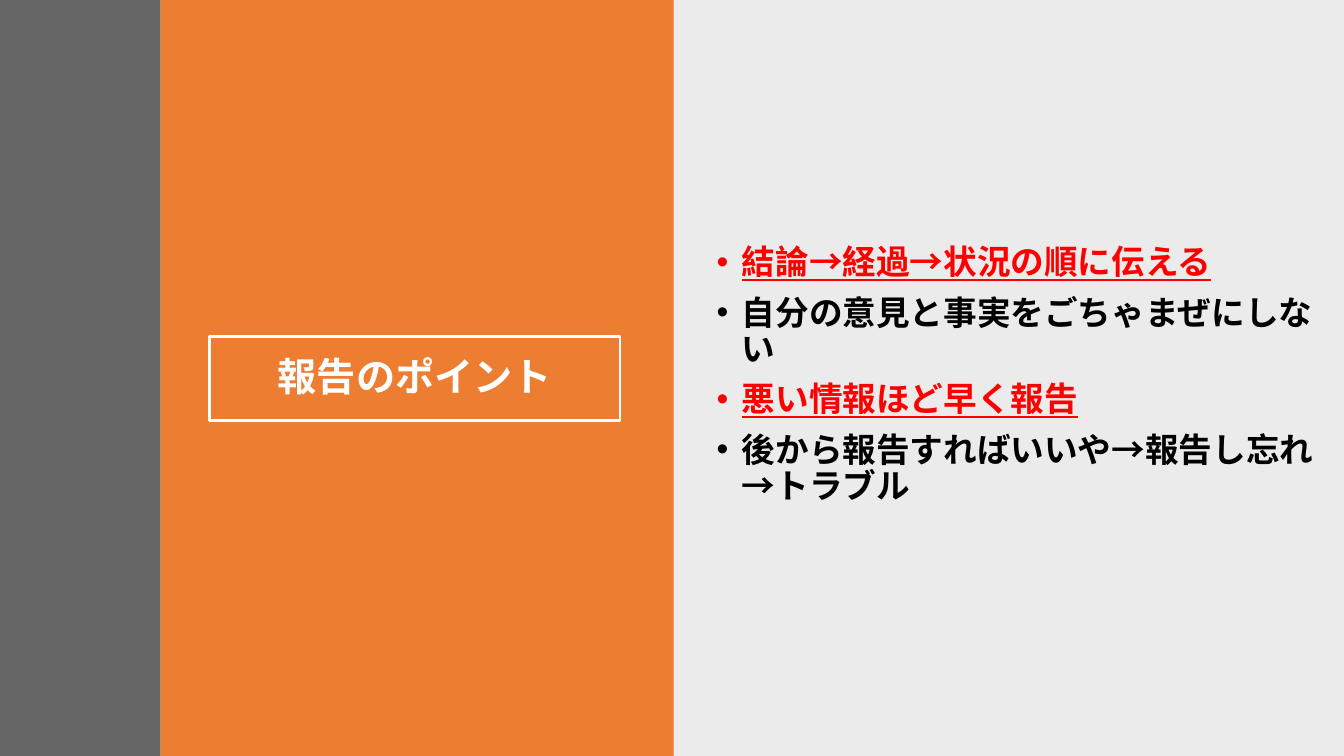
from dataclasses import dataclass

from lxml.etree import SubElement
from pptx import Presentation
from pptx.dml.color import RGBColor
from pptx.enum.shapes import MSO_SHAPE as Shape
from pptx.enum.text import MSO_ANCHOR as Anchor, MSO_AUTO_SIZE as AutoSize, PP_ALIGN as Align
from pptx.oxml.ns import qn
from pptx.slide import Slide
from pptx.util import Inches, Pt

BLACK = RGBColor(0x00, 0x00, 0x00)
WHITE = RGBColor(0xFF, 0xFF, 0xFF)
RED = RGBColor(0xFF, 0x00, 0x00)
ORANGE = RGBColor(0xED, 0x7D, 0x31)
CHARCOAL = RGBColor(0x40, 0x40, 0x40)
FONT = "Calibri"
SLIDE_HEIGHT = Inches(7.5)


@dataclass(frozen=True)
class Band:
    left: float
    width: float
    color: RGBColor
    opacity: int = 100


@dataclass(frozen=True)
class Point:
    text: str
    key: bool = False


BANDS = [
    Band(6.67, 6.67, BLACK, 8),
    Band(1.59, 5.09, ORANGE),
    Band(0, 1.59, CHARCOAL, 80),
]
POINTS = [
    Point("結論→経過→状況の順に伝える", key=True),
    Point("自分の意見と事実をごちゃまぜにしない"),
    Point("悪い情報ほど早く報告", key=True),
    Point("後から報告すればいいや→報告し忘れ→トラブル"),
]


def draw_band(slide: Slide, band: Band) -> None:
    panel = slide.shapes.add_shape(
        Shape.RECTANGLE, Inches(band.left), 0, Inches(band.width), SLIDE_HEIGHT)
    panel.shadow.inherit = False
    panel.line.fill.background()
    panel.fill.solid()
    panel.fill.fore_color.rgb = band.color
    if band.opacity < 100:
        color = panel.fill._xPr.find(qn("a:solidFill"))[0]
        SubElement(color, qn("a:alpha"), val=str(band.opacity * 1000))


def draw_heading(slide: Slide, text: str) -> None:
    heading = slide.shapes.title
    slide.shapes._spTree.append(heading._element)
    heading.left, heading.top = Inches(2.08), Inches(3.34)
    heading.width, heading.height = Inches(4.07), Inches(0.83)
    heading.line.color.rgb = WHITE
    heading.line.width = Pt(2)
    frame = heading.text_frame
    frame.text = text
    frame.word_wrap = True
    frame.auto_size = AutoSize.NONE
    frame.vertical_anchor = Anchor.MIDDLE
    line = frame.paragraphs[0]
    line.alignment = Align.CENTER
    line.line_spacing = 0.9
    line.space_after = Pt(6)
    font = line.runs[0].font
    font.name, font.size, font.bold = FONT, Pt(28), True
    font.color.rgb = WHITE


def draw_points(slide: Slide, points: list[Point]) -> None:
    frame = slide.shapes.add_textbox(
        Inches(7.01), Inches(2.39), Inches(6.15), Inches(3.18)).text_frame
    frame.word_wrap = True
    frame.text = "\n".join(point.text for point in points)
    for index, (point, line) in enumerate(zip(points, frame.paragraphs)):
        line.line_spacing = 0.9
        if index:
            line.space_before = Pt(10)
        properties = line._p.get_or_add_pPr()
        properties.set("marL", str(Inches(0.25)))
        properties.set("indent", str(Inches(-0.25)))
        SubElement(properties, qn("a:buFont"), typeface="Arial")
        SubElement(properties, qn("a:buChar"), char="•")
        font = line.runs[0].font
        font.name, font.size, font.bold = FONT, Pt(24), True
        font.underline = point.key
        font.color.rgb = RED if point.key else BLACK


def main() -> None:
    deck = Presentation()
    deck.slide_width, deck.slide_height = Inches(13.33), SLIDE_HEIGHT
    slide = deck.slides.add_slide(deck.slide_layouts[5])
    for band in BANDS:
        draw_band(slide, band)
    draw_heading(slide, "報告のポイント")
    draw_points(slide, POINTS)
    deck.save("out.pptx")


if __name__ == "__main__":
    main()
